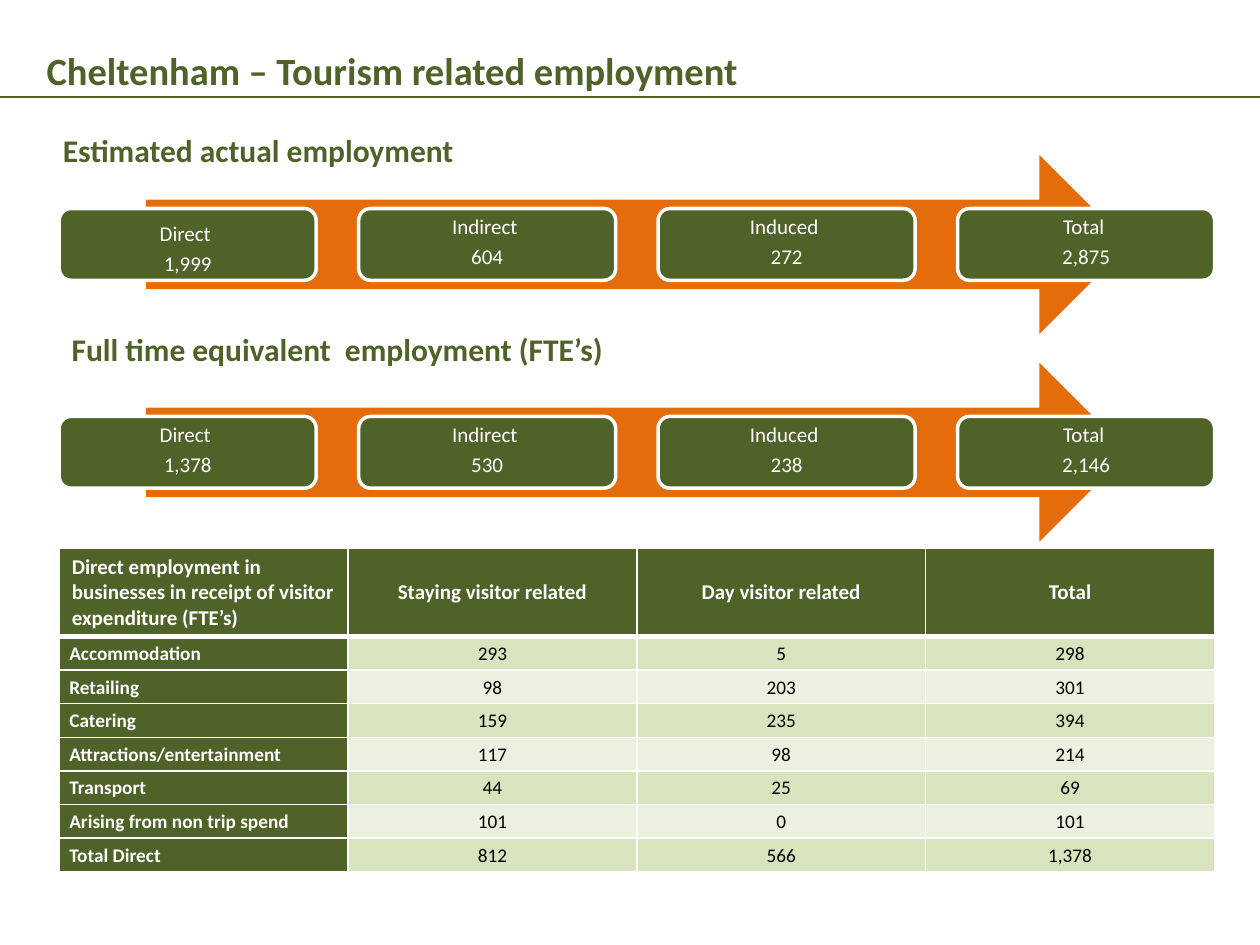
from lxml.etree import SubElement
from pptx import Presentation
from pptx.dml.color import RGBColor
from pptx.enum.shapes import MSO_CONNECTOR, MSO_SHAPE
from pptx.enum.text import MSO_ANCHOR, MSO_AUTO_SIZE, PP_ALIGN
from pptx.oxml.ns import qn
from pptx.util import Inches, Pt

GREEN = RGBColor(0x4F, 0x62, 0x28)
ORANGE = RGBColor(0xE4, 0x6C, 0x0A)
LIGHT_GREEN = RGBColor(0xD7, 0xE4, 0xBD)
PALE_GREEN = RGBColor(0xEB, 0xF1, 0xDE)
WHITE = RGBColor(0xFF, 0xFF, 0xFF)
BLACK = RGBColor(0, 0, 0)

FONT = "Calibri"
SLIDE_WIDTH, SLIDE_HEIGHT = Inches(10), Inches(7.5)
CONTENT_LEFT, CONTENT_WIDTH = Inches(0.47), Inches(9.17)
BOX_WIDTH, BOX_HEIGHT = Inches(2.04), Inches(0.57)
ARROW_LEFT, ARROW_WIDTH, ARROW_HEIGHT = Inches(1.16), Inches(7.8), Inches(1.42)
TABLE_TOP, TABLE_HEIGHT, HEADER_HEIGHT = Inches(4.35), Inches(2.56), Inches(0.69)

LABELS = ["Direct ", "Indirect ", "Induced ", "Total "]
ACTUAL_JOBS = ["1,999", "604", "272", "2,875"]
FULL_TIME_JOBS = ["1,378", "530", "238", "2,146"]
TABLE_ROWS = [
    ["Direct employment in businesses in receipt of visitor expenditure (FTE’s)",
     "Staying visitor related", "Day visitor related", "Total"],
    ["Accommodation", "293", "5", "298"],
    ["Retailing", "98", "203", "301"],
    ["Catering", "159", "235", "394"],
    ["Attractions/entertainment", "117", "98", "214"],
    ["Transport", "44", "25", "69"],
    ["Arising from non trip spend", "101", "0", "101"],
    ["Total Direct", "812", "566", "1,378"],
]


def format_paragraph(paragraph, size, color, bold=False, alignment=PP_ALIGN.LEFT):
    paragraph.alignment = alignment
    for run in paragraph.runs:
        run.font.name = FONT
        run.font.size = Pt(size)
        run.font.bold = bold
        run.font.color.rgb = color


def set_margins(target, left, top, right, bottom):
    target.margin_left, target.margin_top = Inches(left), Inches(top)
    target.margin_right, target.margin_bottom = Inches(right), Inches(bottom)


def add_title(slide, text):
    title = slide.shapes.title
    title.left, title.top = Inches(0.27), Inches(0.25)
    title.width, title.height = Inches(9.53), Inches(0.55)
    frame = title.text_frame
    frame.text = text
    frame.vertical_anchor = MSO_ANCHOR.TOP
    frame.auto_size = MSO_AUTO_SIZE.NONE
    paragraph = frame.paragraphs[0]
    paragraph.line_spacing = 1.2
    paragraph.space_before = Pt(0)
    format_paragraph(paragraph, 22, GREEN, bold=True)


def add_rule(slide, top):
    rule = slide.shapes.add_connector(MSO_CONNECTOR.STRAIGHT, 0, top, SLIDE_WIDTH, top)
    rule.line.color.rgb = GREEN
    rule.line.width = Pt(0.75)
    SubElement(rule._element.spPr, qn("a:effectLst"))


def add_heading(slide, text, left, top, width):
    box = slide.shapes.add_textbox(left, top, width, Inches(0.4))
    box.text_frame.word_wrap = False
    box.text_frame.text = text
    format_paragraph(box.text_frame.paragraphs[0], 18, GREEN, bold=True)


def add_box(shapes, left, top, label, value, text_drop):
    box = shapes.add_shape(MSO_SHAPE.ROUNDED_RECTANGLE, left, top, BOX_WIDTH, BOX_HEIGHT)
    box.shadow.inherit = False
    box.fill.solid()
    box.fill.fore_color.rgb = GREEN
    box.line.color.rgb = WHITE
    box.line.width = Pt(2)
    frame = box.text_frame
    frame.word_wrap = True
    frame.vertical_anchor = MSO_ANCHOR.MIDDLE
    set_margins(frame, 0.05, 0.04 + 2 * text_drop, 0.05, 0.06)
    frame.text = f"{label}\n{value}"
    for paragraph in frame.paragraphs:
        paragraph.line_spacing = 0.9
        paragraph.space_after = Pt(4.2)
        format_paragraph(paragraph, 12, WHITE, alignment=PP_ALIGN.CENTER)


def add_employment_flow(slide, top, values, first_text_drop=0):
    shapes = slide.shapes.add_group_shape().shapes
    arrow = shapes.add_shape(MSO_SHAPE.RIGHT_ARROW, ARROW_LEFT, top, ARROW_WIDTH, ARROW_HEIGHT)
    arrow.shadow.inherit = False
    arrow.fill.solid()
    arrow.fill.fore_color.rgb = ORANGE
    arrow.line.fill.background()
    pitch = (CONTENT_WIDTH - BOX_WIDTH) // (len(values) - 1)
    box_top = top + (ARROW_HEIGHT - BOX_HEIGHT) // 2
    for index, (label, value) in enumerate(zip(LABELS, values)):
        text_drop = first_text_drop if index == 0 else 0
        add_box(shapes, CONTENT_LEFT + index * pitch, box_top, label, value, text_drop)


def add_borders(cell, row):
    widths = {"a:lnL": 1, "a:lnR": 1, "a:lnT": 3 if row == 1 else 1, "a:lnB": 3 if row == 0 else 1}
    properties = cell._tc.get_or_add_tcPr()
    for tag, width in widths.items():
        line = SubElement(properties, qn(tag), w=str(Pt(width)))
        fill = SubElement(line, qn("a:solidFill"))
        SubElement(fill, qn("a:srgbClr"), val=str(WHITE))


def format_cell(cell, row, column):
    is_label = row == 0 or column == 0
    add_borders(cell, row)
    cell.fill.solid()
    cell.fill.fore_color.rgb = GREEN if is_label else LIGHT_GREEN if row % 2 else PALE_GREEN
    cell.vertical_anchor = MSO_ANCHOR.MIDDLE
    if row > 0:
        set_margins(cell, 0.08 if column == 0 else 0.01, 0.01, 0.01, 0)
    format_paragraph(
        cell.text_frame.paragraphs[0],
        12 if row == 0 else 11,
        WHITE if is_label else BLACK,
        bold=is_label,
        alignment=PP_ALIGN.LEFT if column == 0 else PP_ALIGN.CENTER,
    )


def add_employment_table(slide):
    row_count, column_count = len(TABLE_ROWS), len(TABLE_ROWS[0])
    table = slide.shapes.add_table(
        row_count, column_count, CONTENT_LEFT, TABLE_TOP, CONTENT_WIDTH, TABLE_HEIGHT
    ).table
    for row, values in enumerate(TABLE_ROWS):
        body_height = (TABLE_HEIGHT - HEADER_HEIGHT) // (row_count - 1)
        table.rows[row].height = HEADER_HEIGHT if row == 0 else body_height
        for column, value in enumerate(values):
            cell = table.cell(row, column)
            cell.text = value
            format_cell(cell, row, column)


def main():
    presentation = Presentation()
    presentation.slide_width, presentation.slide_height = SLIDE_WIDTH, SLIDE_HEIGHT
    slide = presentation.slides.add_slide(presentation.slide_layouts[5])
    add_title(slide, "Cheltenham – Tourism related employment")
    add_rule(slide, Inches(0.77))
    add_employment_flow(slide, Inches(1.23), ACTUAL_JOBS, first_text_drop=0.05)
    add_employment_flow(slide, Inches(2.88), FULL_TIME_JOBS)
    add_heading(slide, "Estimated actual employment", Inches(0.4), Inches(0.99), Inches(3.33))
    add_heading(slide, "Full time equivalent  employment (FTE’s)",
                CONTENT_LEFT, Inches(2.57), Inches(4.45))
    add_employment_table(slide)
    presentation.save("out.pptx")


if __name__ == "__main__":
    main()
